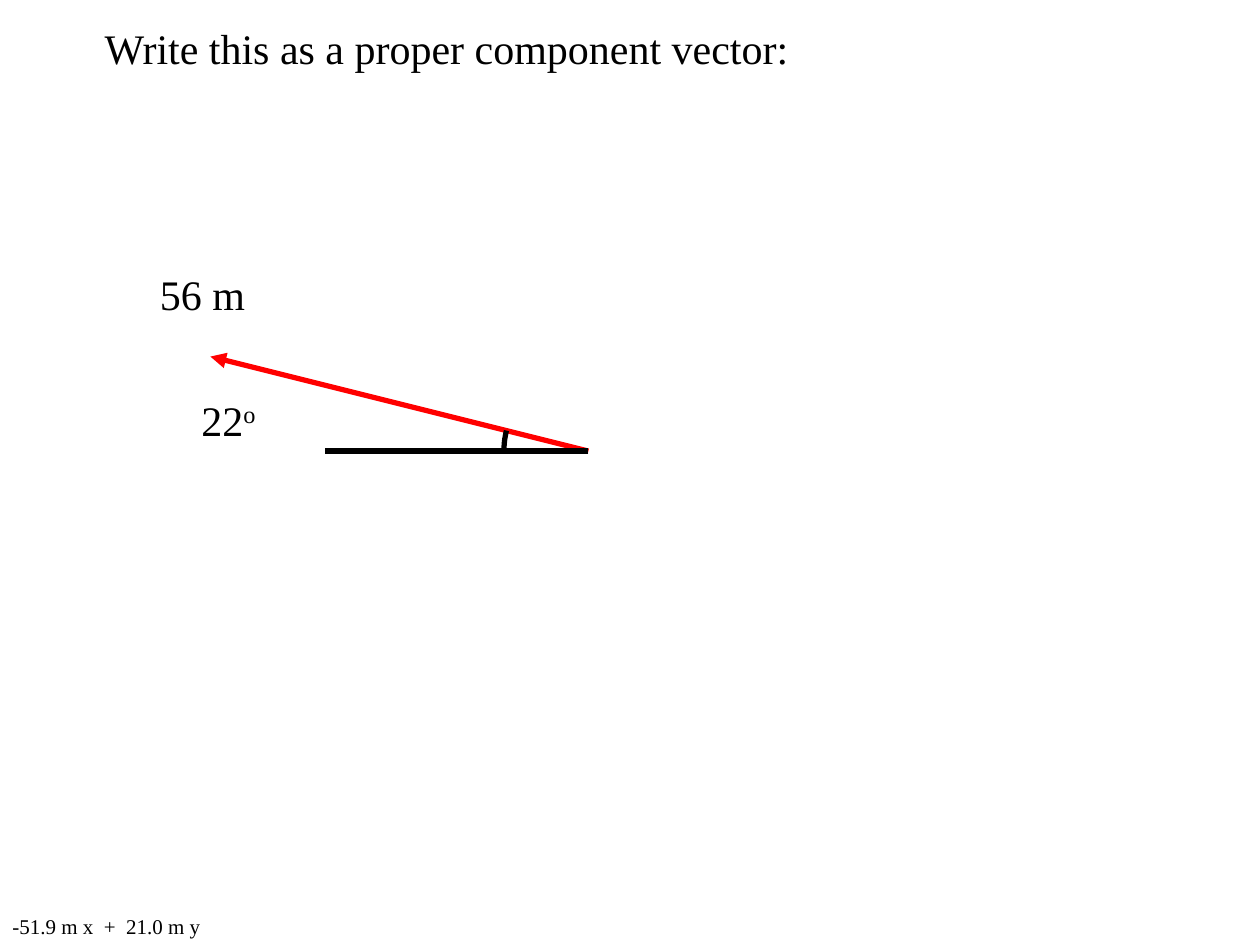
from math import cos, radians, sin

from lxml.etree import SubElement
from pptx import Presentation
from pptx.dml.color import RGBColor
from pptx.enum.shapes import MSO_CONNECTOR
from pptx.enum.text import MSO_ANCHOR, MSO_AUTO_SIZE, PP_ALIGN
from pptx.oxml.ns import qn
from pptx.util import Inches, Pt


def rgb(color):
    return RGBColor.from_string(color)


def write(sp, text, left=0, top=0, width=1, height=0.5, size=24,
          color="000000", font="Times New Roman", superscript=""):
    sp.left, sp.top = Inches(left), Inches(top)
    sp.width, sp.height = Inches(width), Inches(height)
    tf = sp.text_frame
    tf.word_wrap = False
    tf.auto_size = MSO_AUTO_SIZE.SHAPE_TO_FIT_TEXT
    tf.vertical_anchor = MSO_ANCHOR.TOP
    p = tf.paragraphs[0]
    p.alignment = PP_ALIGN.LEFT
    for part, baseline in ((text, 0), (superscript, 30000)):
        if part:
            r = p.add_run()
            r.text = part
            r.font.name = font
            r.font.size = Pt(size)
            r.font.color.rgb = rgb(color)
            if baseline:
                r.font._element.set("baseline", str(baseline))


prs = Presentation()
prs.slide_width, prs.slide_height = Inches(10), Inches(7.5)
s = prs.slides.add_slide(prs.slide_layouts[5])

write(s.shapes.title, "Write this as a proper component vector:",
      left=0.73, top=0.13, width=5.68)

vertex_x, vertex_y = 4.67, 3.58
for end_x, end_y, color, arrow in (
    (1.67, 2.83, "FF0000", True),
    (2.58, vertex_y, "000000", False),
):
    line = s.shapes.add_connector(
        MSO_CONNECTOR.STRAIGHT, Inches(vertex_x), Inches(vertex_y),
        Inches(end_x), Inches(end_y))
    line.line.color.rgb = rgb(color)
    line.line.width = Pt(3)
    if arrow:
        SubElement(line.line._get_or_add_ln(), qn("a:tailEnd"), type="triangle")
    SubElement(line._element.spPr, qn("a:effectLst"))

radius = 0.67
points = [(Inches(vertex_x - radius * cos(radians(a))),
           Inches(vertex_y - radius * sin(radians(a)))) for a in range(2, 15, 2)]
builder = s.shapes.build_freeform(*points[0])
builder.add_line_segments(points[1:], close=False)
arc = builder.convert_to_shape()
arc.shadow.inherit = False
arc.fill.background()
arc.line.color.rgb = rgb("000000")
arc.line.width = Pt(3)

for text, fmt in (
    ("22", dict(left=1.5, top=3.08, width=0.65, superscript="o")),
    ("56 m", dict(left=1.17, top=2.08, width=0.88)),
    ("-51.9 m x  +  21.0 m y", dict(top=7.2, width=1.71, height=0.3, size=12)),
):
    write(s.shapes.add_textbox(0, 0, 0, 0), text, **fmt)

prs.save("out.pptx")
